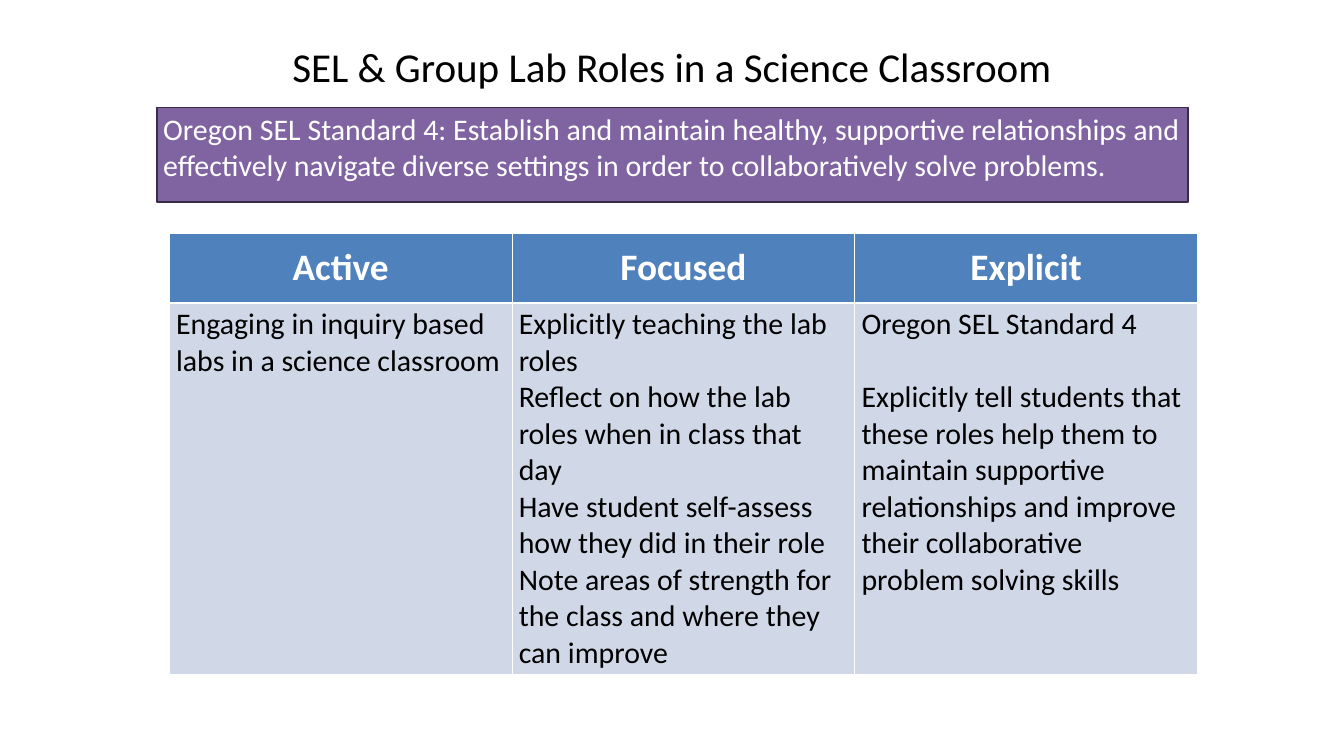
from lxml import etree
from pptx import Presentation
from pptx.dml.color import RGBColor
from pptx.enum.shapes import MSO_SHAPE
from pptx.enum.text import MSO_ANCHOR, PP_ALIGN
from pptx.oxml.ns import qn
from pptx.util import Inches, Pt

RECTANGLE = MSO_SHAPE.RECTANGLE
TOP, MIDDLE = MSO_ANCHOR.TOP, MSO_ANCHOR.MIDDLE
LEFT, CENTER = PP_ALIGN.LEFT, PP_ALIGN.CENTER

SLIDE_WIDTH, SLIDE_HEIGHT = Inches(20), Inches(11.25)
FONT = "Calibri"
COLORS = {
    "black": "000000",
    "white": "FFFFFF",
    "purple": "8064A2",
    "purple_line": "382C47",
    "header": "4F81BD",
    "body": "D0D8E8",
}
TITLE_SIZE, HEADER_SIZE, BODY_SIZE = 44, 40, 32
BODY_LINE = 39  # height in points of one line of body text

# Boxes are left, top, width and height in percent of the slide.
TITLE_BOX = (11.65, 3.2, 76.75, 11.11)
STANDARD_BOX = (11.65, 14.22, 76.75, 12.53)
TABLE_BOX = (12.6, 30.84, 76.5, 58.34)
HEADER_HEIGHT = 9.24

TITLE = "SEL & Group Lab Roles in a Science Classroom"
STANDARD = (
    "Oregon SEL Standard 4: Establish and maintain healthy, supportive relationships "
    "and effectively navigate diverse settings in order to collaboratively solve problems."
)
# Each column: heading, paragraphs, space between paragraphs in points.
COLUMNS = [
    ("Active", ["Engaging in inquiry based labs in a science classroom"], 0),
    ("Focused", [
        "Explicitly teaching the lab roles",
        "Reflect on how the lab roles when in class that day",
        "Have student self-assess how they did in their role",
        "Note areas of strength for the class and where they can improve",
    ], 0),
    ("Explicit", [
        "Oregon SEL Standard 4",
        "Explicitly tell students that these roles help them to maintain supportive "
        "relationships and improve their collaborative problem solving skills",
    ], BODY_LINE),
]


def color(name):
    return RGBColor.from_string(COLORS[name])


def across(percent):
    return int(SLIDE_WIDTH * percent / 100)


def down(percent):
    return int(SLIDE_HEIGHT * percent / 100)


def place(box):
    left, top, width, height = box
    return across(left), down(top), across(width), down(height)


def write(text_frame, texts, size, color_name, alignment=LEFT, bold=False, gap=0):
    text_frame.word_wrap = True
    for index, text in enumerate(texts):
        paragraph = text_frame.add_paragraph() if index else text_frame.paragraphs[0]
        paragraph.alignment = alignment
        if index:
            paragraph.space_before = Pt(gap)
        run = paragraph.add_run()
        run.text = text
        run.font.name = FONT
        run.font.size = Pt(size)
        run.font.bold = bold
        run.font.color.rgb = color(color_name)


def add_title(slide):
    text_frame = slide.shapes.add_textbox(*place(TITLE_BOX)).text_frame
    text_frame.vertical_anchor = MIDDLE
    write(text_frame, [TITLE], TITLE_SIZE, "black", CENTER)


def add_standard(slide):
    shape = slide.shapes.add_shape(RECTANGLE, *place(STANDARD_BOX))
    shape.shadow.inherit = False
    shape.fill.solid()
    shape.fill.fore_color.rgb = color("purple")
    shape.line.color.rgb = color("purple_line")
    shape.line.width = Pt(2)
    shape.text_frame.vertical_anchor = TOP
    write(shape.text_frame, [STANDARD], BODY_SIZE, "white")


def set_borders(cell, top, bottom):
    """Draw white borders, with top and bottom widths in points; the sides are 1."""
    properties = cell._tc.get_or_add_tcPr()
    widths = {"a:lnL": 1, "a:lnR": 1, "a:lnT": top, "a:lnB": bottom}
    for position, (tag, width) in enumerate(widths.items()):
        line = etree.Element(qn(tag), w=str(Pt(width)))
        fill = etree.SubElement(line, qn("a:solidFill"))
        etree.SubElement(fill, qn("a:srgbClr"), val=COLORS["white"])
        properties.insert(position, line)


def style_cell(cell, fill_name, anchor, top, bottom):
    cell.fill.solid()
    cell.fill.fore_color.rgb = color(fill_name)
    cell.vertical_anchor = anchor
    set_borders(cell, top, bottom)


def add_roles_table(slide):
    table = slide.shapes.add_table(2, len(COLUMNS), *place(TABLE_BOX)).table
    table.rows[0].height = down(HEADER_HEIGHT)
    table.rows[1].height = down(TABLE_BOX[3] - HEADER_HEIGHT)
    for index, (heading, texts, gap) in enumerate(COLUMNS):
        header, body = table.cell(0, index), table.cell(1, index)
        style_cell(header, "header", MIDDLE, top=1, bottom=3)
        style_cell(body, "body", TOP, top=3, bottom=1)
        write(header.text_frame, [heading], HEADER_SIZE, "white", CENTER, bold=True)
        write(body.text_frame, texts, BODY_SIZE, "black", gap=gap)


def main():
    presentation = Presentation()
    presentation.slide_width = SLIDE_WIDTH
    presentation.slide_height = SLIDE_HEIGHT
    slide = presentation.slides.add_slide(presentation.slide_layouts[6])
    add_title(slide)
    add_standard(slide)
    add_roles_table(slide)
    presentation.save("out.pptx")


if __name__ == "__main__":
    main()
